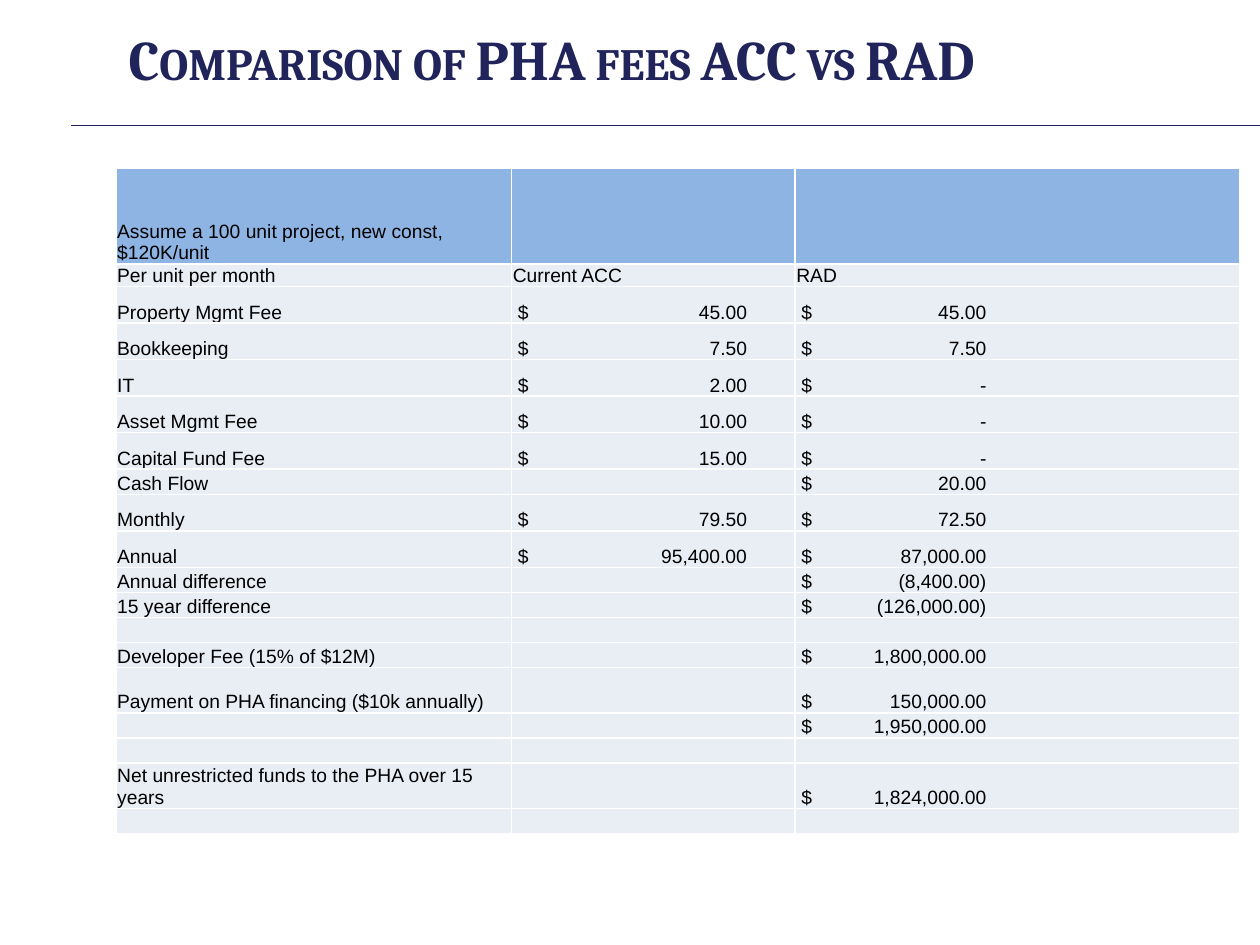
from lxml.etree import SubElement
from pptx import Presentation
from pptx.dml.color import RGBColor
from pptx.enum.shapes import MSO_CONNECTOR as Connector
from pptx.enum.text import MSO_ANCHOR as Anchor, PP_ALIGN as Align
from pptx.oxml.ns import qn
from pptx.util import Inches, Pt

NAVY = RGBColor(0x21, 0x24, 0x5A)
BLACK = RGBColor(0, 0, 0)
WHITE = RGBColor(0xFF, 0xFF, 0xFF)
HEADER_BLUE = RGBColor(0x8E, 0xB4, 0xE3)
PALE_BLUE = RGBColor(0xE9, 0xED, 0xF4)

WIDTH, HEIGHT = 10, 7.5
COLUMNS = [3.14, 2.25, 3.53]
AMOUNT_ENDS = [None, 1.82, 1.47]  # right tab stop of each amount column
HEAD, LINE, SPACED, DOUBLE = 0.76, 0.19, 0.29, 0.36

# Row height, label, current ACC, RAD; amounts start with "$"
FEES = [
    (HEAD, "Assume a 100 unit project, new const, $120K/unit", "", ""),
    (0.15, "Per unit per month", "Current ACC", "RAD"),
    (SPACED, "Property Mgmt Fee", "$45.00", "$45.00"),
    (SPACED, "Bookkeeping", "$7.50", "$7.50"),
    (SPACED, "IT", "$2.00", "$-"),
    (SPACED, "Asset Mgmt Fee", "$10.00", "$-"),
    (SPACED, "Capital Fund Fee", "$15.00", "$-"),
    (LINE, "Cash Flow", "", "$20.00"),
    (SPACED, "Monthly", "$79.50", "$72.50"),
    (SPACED, "Annual", "$95,400.00", "$87,000.00"),
    (LINE, "Annual difference", "", "$(8,400.00)"),
    (LINE, "15 year difference", "", "$(126,000.00)"),
    (LINE, "", "", ""),
    (LINE, "Developer Fee (15% of $12M)", "", "$1,800,000.00"),
    (DOUBLE, "Payment on PHA financing ($10k annually)", "", "$150,000.00"),
    (LINE, "", "", "$1,950,000.00"),
    (LINE, "", "", ""),
    (DOUBLE, "Net unrestricted funds to the PHA over 15 years", "", "$1,824,000.00"),
    (LINE, "", "", ""),
]


def apply(target, values):
    for key, value in values.items():
        setattr(target, key, value)


class FeeSlide:
    title_font = dict(name="Cambria", size=Pt(32), bold=True)
    cell_font = dict(name="Arial", size=Pt(11), bold=False)
    cell_box = dict(vertical_anchor=Anchor.BOTTOM, margin_left=Inches(0.01),
                    margin_right=Inches(0.01), margin_top=Inches(0.01), margin_bottom=0)

    def __init__(self, deck):
        self.slide = deck.slides.add_slide(deck.slide_layouts[5])

    def place(self, x, y):
        """Turn shares of the slide's size into lengths."""
        return Inches(x * WIDTH), Inches(y * HEIGHT)

    def title(self, text, x, y, width, height):
        heading = self.slide.shapes.title
        heading.left, heading.top = self.place(x, y)
        heading.width, heading.height = self.place(width, height)
        heading.text_frame.vertical_anchor = Anchor.MIDDLE
        paragraph = heading.text_frame.paragraphs[0]
        paragraph.alignment = Align.LEFT
        run = paragraph.add_run()
        run.text = text
        apply(run.font, self.title_font)
        run.font.color.rgb = NAVY
        run.font._element.set("cap", "small")

    def rule(self, x1, x2, y):
        line = self.slide.shapes.add_connector(
            Connector.STRAIGHT, *self.place(x1, y), *self.place(x2, y))
        line.line.color.rgb = NAVY
        line.line.width = Pt(0.75)
        SubElement(line._element.spPr, qn("a:effectLst"))

    def table(self, rows, x, y):
        size = Inches(sum(COLUMNS)), Inches(sum(row[0] for row in rows))
        table = self.slide.shapes.add_table(
            len(rows), len(COLUMNS), *self.place(x, y), *size).table
        apply(table, dict(first_row=False, horz_banding=False))
        for column, width in zip(table.columns, COLUMNS):
            column.width = Inches(width)
        for r, (height, *texts) in enumerate(rows):
            table.rows[r].height = Inches(height)
            for c, text in enumerate(texts):
                self.cell(table.cell(r, c), text, HEADER_BLUE if r == 0 else PALE_BLUE,
                          AMOUNT_ENDS[c])

    def cell(self, cell, text, color, amount_end):
        apply(cell, self.cell_box)
        self.borders(cell)
        cell.fill.solid()
        cell.fill.fore_color.rgb = color
        paragraph = cell.text_frame.paragraphs[0]
        if not text:  # keeps an empty row at its height
            SubElement(paragraph._p, qn("a:endParaRPr"), sz="1100")
            return
        if text.startswith("$"):
            cell.margin_left = Inches(0.05)
            tabs = SubElement(paragraph._p.get_or_add_pPr(), qn("a:tabLst"))
            SubElement(tabs, qn("a:tab"), pos=str(Inches(amount_end)), algn="r")
            text = "$\t" + text[1:]
        run = paragraph.add_run()
        run.text = text
        apply(run.font, self.cell_font)
        run.font.color.rgb = BLACK

    def borders(self, cell):
        for side in ("lnL", "lnR", "lnT", "lnB"):
            line = SubElement(cell._tc.get_or_add_tcPr(), qn("a:" + side), w=str(Pt(1)))
            fill = SubElement(line, qn("a:solidFill"))
            SubElement(fill, qn("a:srgbClr"), val=str(WHITE))


def main():
    deck = Presentation()
    deck.slide_width, deck.slide_height = Inches(WIDTH), Inches(HEIGHT)
    page = FeeSlide(deck)
    # Heading and the rule under it
    page.rule(0.056, 1, 0.133)
    page.title("Comparison of PHA fees ACC vs RAD", 0.092, 0.023, 0.883, 0.077)
    # Fee comparison
    page.table(FEES, 0.092, 0.178)
    deck.save("out.pptx")


if __name__ == "__main__":
    main()
